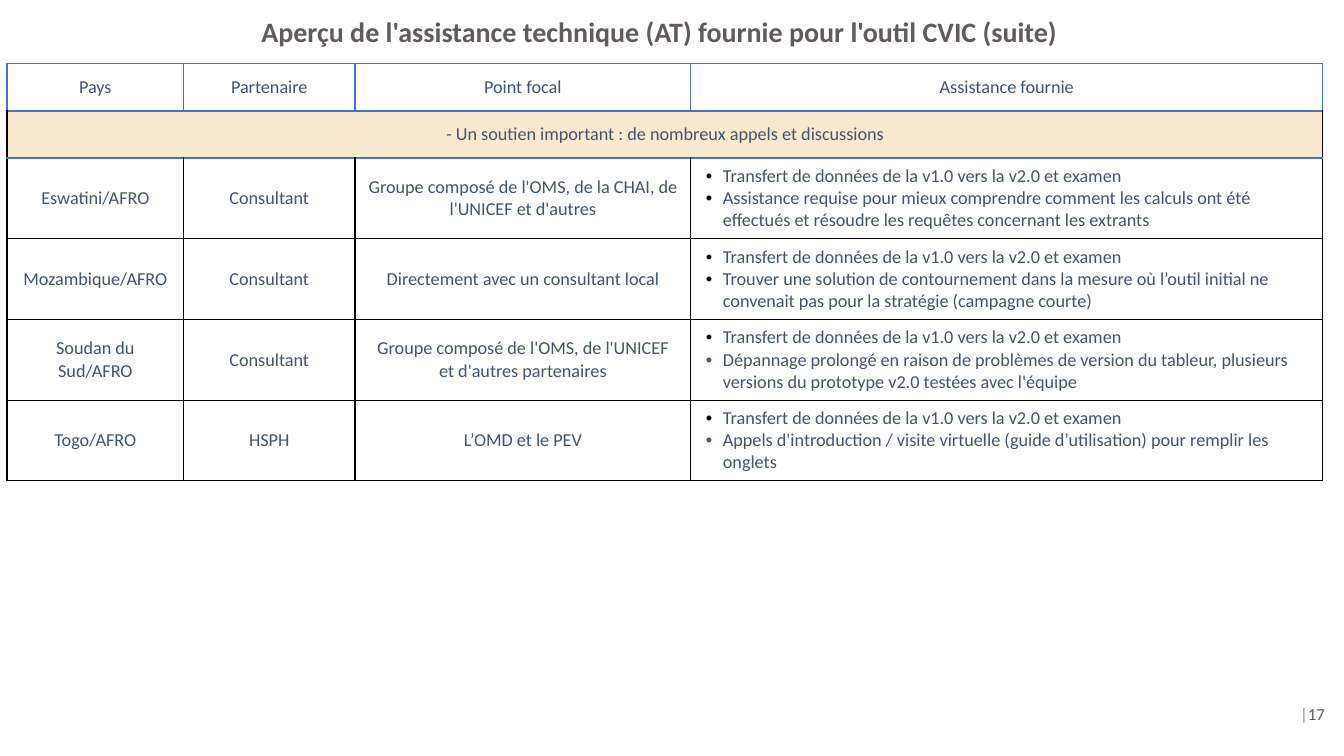
from lxml.etree import SubElement
from pptx import Presentation
from pptx.dml.color import RGBColor
from pptx.enum.text import MSO_ANCHOR as Anchor, PP_ALIGN as Align
from pptx.oxml.ns import qn
from pptx.util import Inches, Pt

WHITE = RGBColor(0xFF, 0xFF, 0xFF)
BLACK = RGBColor(0x00, 0x00, 0x00)
BLUE = RGBColor(0x44, 0x72, 0xC4)
SLATE = RGBColor(0x44, 0x54, 0x6A)
BROWN = RGBColor(0x61, 0x5B, 0x5A)
GREY = RGBColor(0x8C, 0x8C, 0x8C)
SAND = RGBColor(0xF9, 0xE9, 0xCE)
FONT = "Calibri"

COLUMN_WIDTHS = (1.75, 1.7, 3.33, 6.27)
ROW_HEIGHTS = (0.47, 0.47, 0.8, 0.8, 0.8, 0.8)
HEADERS = ("Pays", "Partenaire", "Point focal", "Assistance fournie")
BANNER = "- Un soutien important : de nombreux appels et discussions"
TRANSFER = "Transfert de données de la v1.0 vers la v2.0 et examen"

# Country, partner, focal point, specific assistance, colour of its bullet
COUNTRIES = (
    ("Eswatini/AFRO", "Consultant",
     "Groupe composé de l'OMS, de la CHAI, de l'UNICEF et d'autres",
     "Assistance requise pour mieux comprendre comment les calculs ont été "
     "effectués et résoudre les requêtes concernant les extrants", BLACK),
    ("Mozambique/AFRO", "Consultant", "Directement avec un consultant local",
     "Trouver une solution de contournement dans la mesure où l’outil initial "
     "ne convenait pas pour la stratégie (campagne courte)", BLACK),
    ("Soudan du Sud/AFRO", "Consultant",
     "Groupe composé de l'OMS, de l'UNICEF et d'autres partenaires",
     "Dépannage prolongé en raison de problèmes de version du tableur, plusieurs "
     "versions du prototype v2.0 testées avec l'équipe", SLATE),
    ("Togo/AFRO", "HSPH", "L’OMD et le PEV",
     "Appels d'introduction / visite virtuelle (guide d’utilisation) pour "
     "remplir les onglets", SLATE),
)


def write(paragraph, text, size=13, color=SLATE, bold=False, align=Align.CENTER):
    paragraph.alignment = align
    run = paragraph.add_run()
    run.text = text
    run.font.name = FONT
    run.font.size = Pt(size)
    run.font.bold = bold
    run.font.color.rgb = color


def add_bullet(paragraph, color):
    properties = paragraph._p.get_or_add_pPr()
    properties.set("marL", str(Inches(0.19)))
    properties.set("indent", str(Inches(-0.17)))
    bullet_color = SubElement(properties, qn("a:buClr"))
    SubElement(bullet_color, qn("a:srgbClr"), val=str(color))
    SubElement(properties, qn("a:buFont"), typeface="Arial")
    SubElement(properties, qn("a:buChar"), char="•")


def set_borders(cell, sides, top, bottom):
    """Each border is a (colour, points) pair."""
    properties = cell._tc.get_or_add_tcPr()
    borders = {"lnL": sides, "lnR": sides, "lnT": top, "lnB": bottom}
    for tag, (color, points) in borders.items():
        line = SubElement(properties, qn(f"a:{tag}"), w=str(Pt(points)))
        fill = SubElement(line, qn("a:solidFill"))
        SubElement(fill, qn("a:srgbClr"), val=str(color))


def add_text_box(slide, left, top, width, height, margin):
    box = slide.shapes.add_textbox(*map(Inches, (left, top, width, height)))
    frame = box.text_frame
    frame.word_wrap = True
    frame.vertical_anchor = Anchor.MIDDLE
    frame.margin_left = frame.margin_right = Inches(0.13)
    frame.margin_top = frame.margin_bottom = Inches(margin)
    return frame.paragraphs[0]


def add_title(slide, left, top, width, height):
    paragraph = add_text_box(slide, left, top, width, height, margin=0.07)
    write(paragraph, "Aperçu de l'assistance technique (AT) fournie pour l'outil CVIC (suite)",
          size=20, color=BROWN, bold=True)


def add_page_number(slide, left, top, width, height):
    paragraph = add_text_box(slide, left, top, width, height, margin=0.13)
    write(paragraph, "|", size=12, color=GREY, align=Align.RIGHT)
    write(paragraph, "17", size=12, color=BROWN, align=Align.RIGHT)


def format_cell(cell, row_index):
    thin, blue_thin, blue_thick = (BLACK, 1), (BLUE, 1), (BLUE, 2)
    if row_index == 0:
        set_borders(cell, blue_thin, blue_thin, blue_thick)
    elif row_index == 1:
        set_borders(cell, thin, blue_thick, blue_thick)
    else:
        set_borders(cell, thin, blue_thick if row_index == 2 else thin, thin)
    cell.fill.solid()
    cell.fill.fore_color.rgb = SAND if row_index == 1 else WHITE
    cell.vertical_anchor = Anchor.MIDDLE
    cell.margin_left = cell.margin_right = Inches(0.13)
    cell.margin_top = cell.margin_bottom = Inches(0.07)


def add_assistance_table(slide, left, top):
    frame = slide.shapes.add_table(
        len(ROW_HEIGHTS), len(COLUMN_WIDTHS), Inches(left), Inches(top),
        Inches(sum(COLUMN_WIDTHS)), Inches(sum(ROW_HEIGHTS)))
    table = frame.table
    table.first_row = table.horz_banding = False
    for column, width in zip(table.columns, COLUMN_WIDTHS):
        column.width = Inches(width)
    for row_index, (row, height) in enumerate(zip(table.rows, ROW_HEIGHTS)):
        row.height = Inches(height)
        for cell in row.cells:
            format_cell(cell, row_index)

    # Header and banner
    for cell, header in zip(table.rows[0].cells, HEADERS):
        write(cell.text_frame.paragraphs[0], header)
    banner = table.cell(1, 0)
    banner.merge(table.cell(1, len(COLUMN_WIDTHS) - 1))
    write(banner.text_frame.paragraphs[0], BANNER)

    # One row per country
    for row_index, (*labels, assistance, bullet_color) in enumerate(COUNTRIES, start=2):
        for column_index, label in enumerate(labels):
            write(table.cell(row_index, column_index).text_frame.paragraphs[0], label)
        text_frame = table.cell(row_index, len(labels)).text_frame
        text_frame.add_paragraph()
        items = ((TRANSFER, BLACK), (assistance, bullet_color))
        for paragraph, (text, color) in zip(text_frame.paragraphs, items):
            write(paragraph, text, align=Align.LEFT)
            add_bullet(paragraph, color)


def main():
    presentation = Presentation()
    presentation.slide_width = Inches(13.33)
    presentation.slide_height = Inches(7.5)
    slide = presentation.slides.add_slide(presentation.slide_layouts[6])
    add_page_number(slide, 12.47, 6.8, 0.8, 0.57)
    add_assistance_table(slide, 0.07, 0.63)
    add_title(slide, 1.63, 0, 9.82, 0.63)
    presentation.save("out.pptx")


if __name__ == "__main__":
    main()
